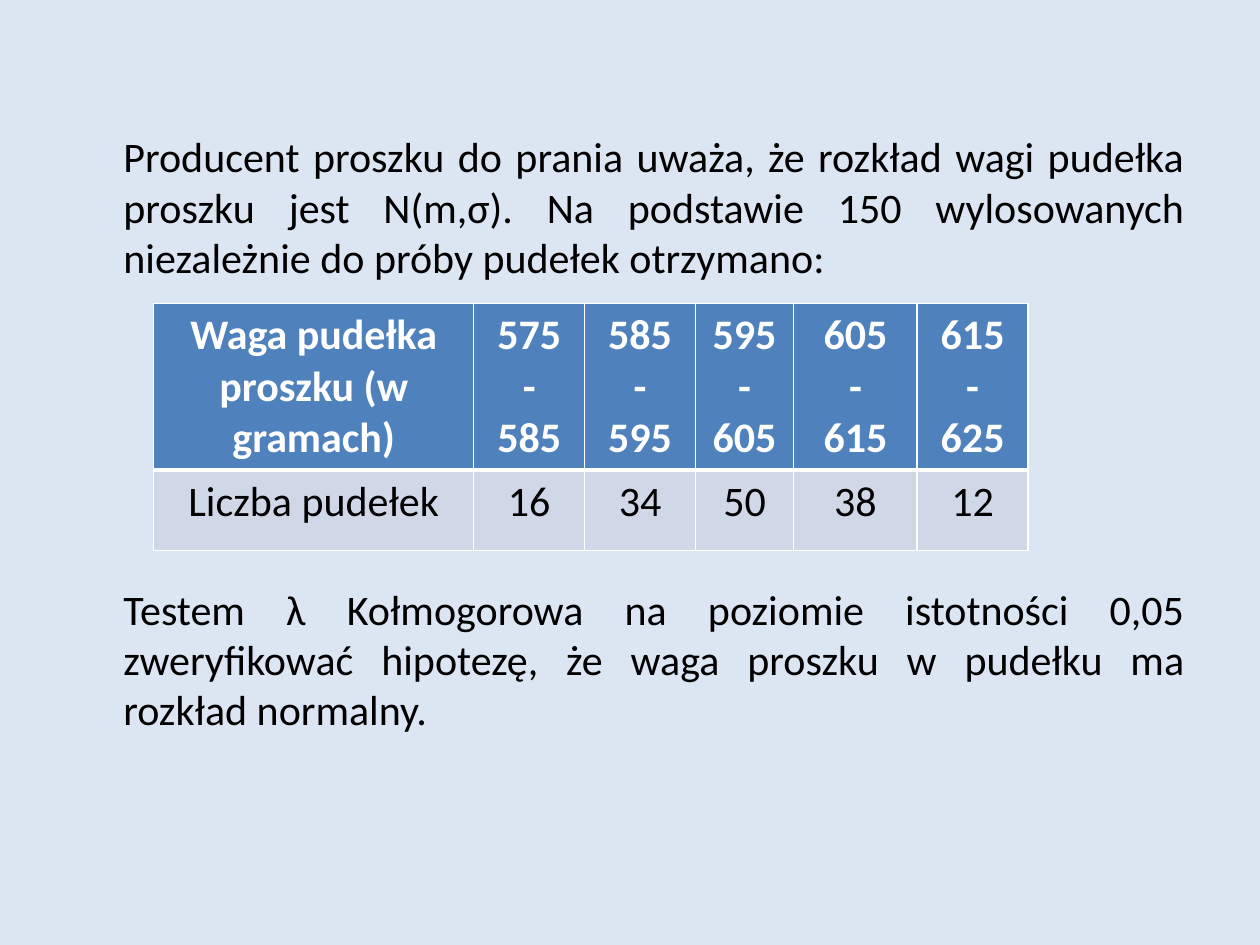
from lxml import etree
from pptx import Presentation
from pptx.dml.color import RGBColor
from pptx.enum.text import PP_ALIGN
from pptx.oxml.ns import qn
from pptx.util import Inches, Pt

CENTER, JUSTIFY = PP_ALIGN.CENTER, PP_ALIGN.JUSTIFY

COLORS = {
    "background": "DCE6F2",
    "header": "4F81BD",
    "body": "D0D8E8",
    "border": "FFFFFF",
    "light_text": "FFFFFF",
    "dark_text": "000000",
}
FONT, SIZE = "Calibri", 24

PARAGRAPHS = [
    ("Producent proszku do prania uważa, że rozkład wagi pudełka proszku jest "
     "N(m,σ). Na podstawie 150 wylosowanych niezależnie do próby pudełek otrzymano:", 0),
    ("Testem λ Kołmogorowa na poziomie istotności 0,05 zweryfikować hipotezę, "
     "że waga proszku w pudełku ma rozkład normalny.", 172),
]
TABLE_ROWS = [
    [["Waga pudełka proszku (w gramach)"], ["575", "-", "585"], ["585", "-", "595"],
     ["595-605"], ["605", "-", "615"], ["615", "-", "625"]],
    [["Liczba pudełek"], ["16"], ["34"], ["50"], ["38"], ["12"]],
]
COLUMN_WIDTHS = [2.54, 0.88, 0.88, 0.78, 0.98, 0.88]
ROW_HEIGHTS = [1.32, 0.64]


def add_paragraph(frame, index, text, align, color, bold=False):
    para = frame.add_paragraph() if index else frame.paragraphs[0]
    para.alignment = align
    span = para.add_run()
    span.text = text
    span.font.name = FONT
    span.font.size = Pt(SIZE)
    span.font.bold = bold
    span.font.color.rgb = RGBColor.from_string(COLORS[color])
    return para


def set_borders(cell, widths):
    properties = cell._tc.get_or_add_tcPr()
    for position, (side, width) in enumerate(widths.items()):
        line = etree.Element(qn(f"a:ln{side}"), w=str(Pt(width)))
        fill = etree.SubElement(line, qn("a:solidFill"))
        etree.SubElement(fill, qn("a:srgbClr"), val=COLORS["border"])
        properties.insert(position, line)


def add_story(page):
    box = page.shapes.add_textbox(Inches(0.5), Inches(0.99), Inches(9), Inches(5.71))
    frame = box.text_frame
    frame.word_wrap = True
    frame.margin_left = Inches(0.48)
    for index, (text, space) in enumerate(PARAGRAPHS):
        para = add_paragraph(frame, index, text, JUSTIFY, "dark_text")
        para.space_before = Pt(space)


def add_weights_table(page):
    table = page.shapes.add_table(
        len(ROW_HEIGHTS), len(COLUMN_WIDTHS), Inches(1.22), Inches(2.41),
        Inches(sum(COLUMN_WIDTHS)), Inches(sum(ROW_HEIGHTS))).table
    for column, width in zip(table.columns, COLUMN_WIDTHS):
        column.width = Inches(width)
    for row_index, cells in enumerate(TABLE_ROWS):
        table.rows[row_index].height = Inches(ROW_HEIGHTS[row_index])
        is_header = row_index == 0
        for column_index, lines in enumerate(cells):
            cell = table.cell(row_index, column_index)
            cell.fill.solid()
            cell.fill.fore_color.rgb = RGBColor.from_string(
                COLORS["header" if is_header else "body"])
            set_borders(cell, {"L": 1, "R": 1, "T": 1 if is_header else 3,
                               "B": 3 if is_header else 1})
            for index, text in enumerate(lines):
                add_paragraph(cell.text_frame, index, text, CENTER,
                              "light_text" if is_header else "dark_text", is_header)


def main():
    """Build the slide with the washing powder weight exercise."""
    deck = Presentation()
    deck.slide_width, deck.slide_height = Inches(10), Inches(7.5)
    page = deck.slides.add_slide(deck.slide_layouts[6])
    page.background.fill.solid()
    page.background.fill.fore_color.rgb = RGBColor.from_string(COLORS["background"])
    add_story(page)
    add_weights_table(page)
    deck.save("out.pptx")


if __name__ == "__main__":
    main()
